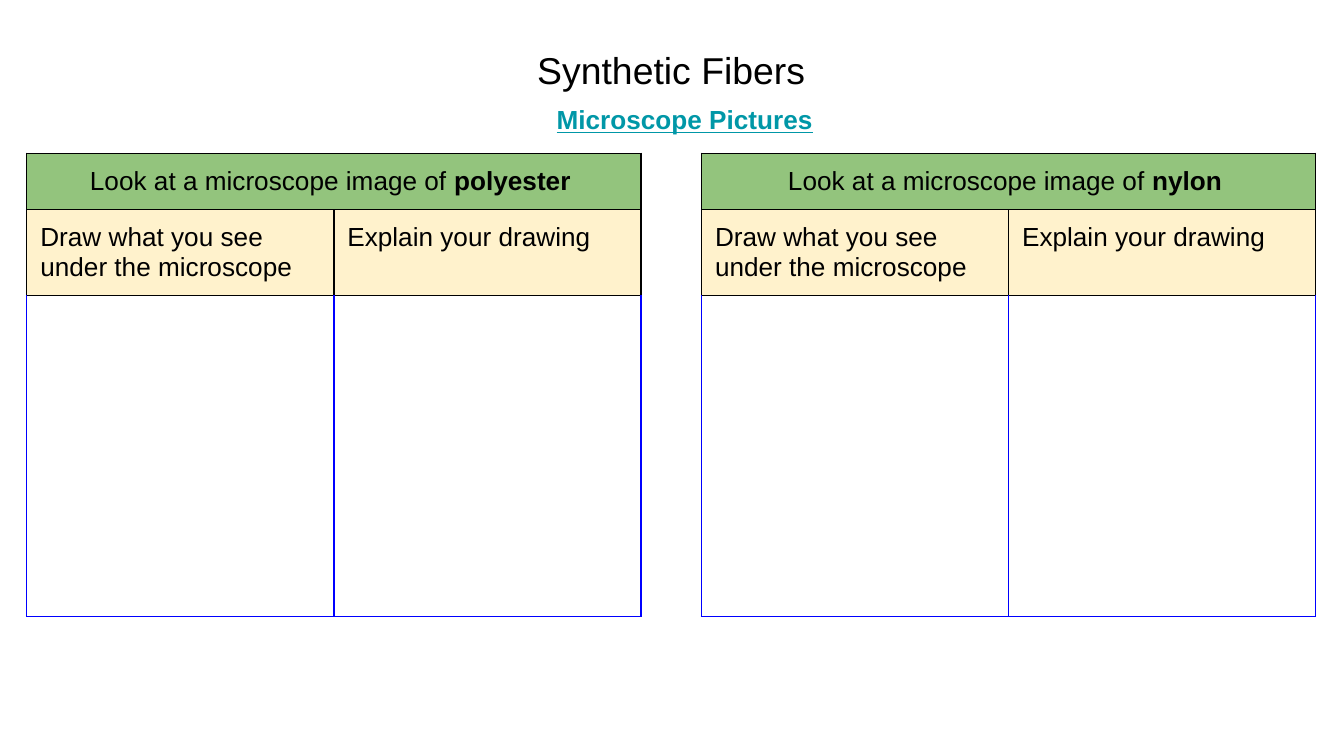
from lxml import etree
from pptx import Presentation
from pptx.dml.color import RGBColor
from pptx.enum import text as t
from pptx.oxml import ns
from pptx.util import Inches, Pt

BLACK = RGBColor(0x00, 0x00, 0x00)
BLUE = RGBColor(0x00, 0x00, 0xFF)
GREEN = RGBColor(0x93, 0xC4, 0x7D)
CREAM = RGBColor(0xFF, 0xF2, 0xCC)
TEAL = RGBColor(0x00, 0x97, 0xA7)

FONT = "Arial"
PAD = Inches(0.1)
ROWS = (0.42, 0.64, 2.39)
WIDTH = 4.57


def add_run(para, words, size=14, color=BLACK, bold=False, line=False):
    run = para.add_run()
    run.text = words
    font = run.font
    font.name, font.size, font.bold = FONT, Pt(size), bold
    font.underline = line
    font.color.rgb = color


def set_frame(frame):
    frame.margin_left = frame.margin_right = PAD
    frame.margin_top = frame.margin_bottom = PAD
    frame.word_wrap = True
    frame.auto_size = t.MSO_AUTO_SIZE.NONE
    frame.vertical_anchor = t.MSO_ANCHOR.TOP
    para = frame.paragraphs[0]
    para.alignment = t.PP_ALIGN.CENTER
    return para


def add_title(slide):
    title = slide.shapes.title
    title.left, title.top = Inches(3.7), Inches(0.25)
    title.width, title.height = Inches(2.59), Inches(0.54)
    add_run(set_frame(title.text_frame), "Synthetic Fibers", 20)


def add_label(slide):
    box = slide.shapes.add_textbox(
        Inches(3.8), Inches(0.67), Inches(2.59), Inches(0.34))
    add_run(set_frame(box.text_frame), "Microscope Pictures",
            color=TEAL, bold=True, line=True)


def set_edges(cell, color, top):
    props = cell._tc.get_or_add_tcPr()
    for side, tint in zip("LRTB", (color, color, top, color)):
        edge = etree.SubElement(props, ns.qn(f"a:ln{side}"), w=str(Pt(0.75)))
        fill = etree.SubElement(edge, ns.qn("a:solidFill"))
        etree.SubElement(fill, ns.qn("a:srgbClr"), val=str(tint))


def set_cell(cell, fill=None, edge=BLACK):
    cell.margin_left = cell.margin_right = PAD
    cell.margin_top = cell.margin_bottom = PAD
    set_edges(cell, edge, BLACK)
    if fill is None:
        cell.fill.background()
    else:
        cell.fill.solid()
        cell.fill.fore_color.rgb = fill


def add_sheet(slide, left, fiber):
    table = slide.shapes.add_table(
        3, 2, Inches(left), Inches(1.14),
        Inches(WIDTH), Inches(sum(ROWS))).table
    table.first_row = table.horz_banding = False
    for row, height in zip(table.rows, ROWS):
        row.height = Inches(height)

    # Green heading, cream prompts, blue-edged space for answers
    looks = ((GREEN, BLACK), (CREAM, BLACK), (None, BLUE))
    for row, look in zip(table.rows, looks):
        for cell in row.cells:
            set_cell(cell, *look)

    # Heading across both columns
    head = table.cell(0, 0)
    head.merge(table.cell(0, 1))
    para = head.text_frame.paragraphs[0]
    para.alignment = t.PP_ALIGN.CENTER
    add_run(para, "Look at a microscope image of ")
    add_run(para, fiber + " ", bold=True)

    # Prompts
    prompts = ("Draw what you see under the microscope",
               "Explain your drawing")
    for col, words in enumerate(prompts):
        add_run(table.cell(1, col).text_frame.paragraphs[0], words)


def main():
    # A 16:9 slide
    deck = Presentation()
    deck.slide_width = Inches(10)
    deck.slide_height = Inches(10 * 9 / 16)
    slide = deck.slides.add_slide(deck.slide_layouts[5])

    # One sheet for each fiber
    for left, fiber in ((0.2, "polyester"), (5.22, "nylon")):
        add_sheet(slide, left, fiber)

    # Title and label
    add_title(slide)
    add_label(slide)
    deck.save("out.pptx")


if __name__ == "__main__":
    main()
